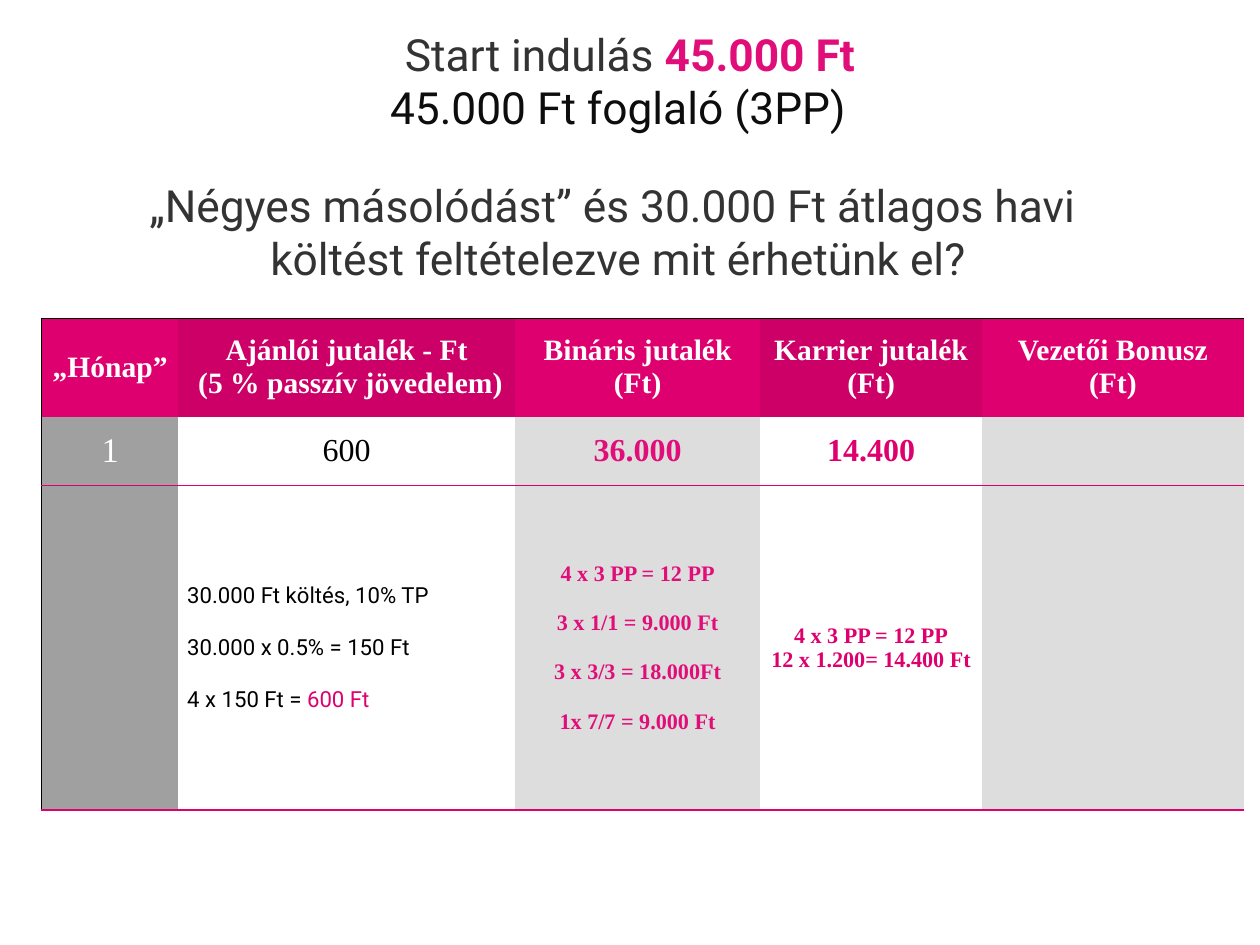
from lxml import etree
from pptx import Presentation
from pptx.dml.color import RGBColor as Rgb
from pptx.enum.text import MSO_ANCHOR as Anchor, PP_ALIGN as Align
from pptx.oxml import parse_xml
from pptx.oxml.ns import nsdecls, qn
from pptx.util import Pt

theme = {
    "pink": "DE006E", "rose": "E10E79", "plum": "CC0066",
    "dark": "333333", "ink": "0D0D0D", "black": "000000", "white": "FFFFFF",
    "gray": "A0A0A0", "pale": "DDDDDD",
    "sans": "Roboto", "serif": "Times New Roman",
    "title": 36, "head": 24, "month": 28, "sum": 26, "note": 18,
}


def write(para, runs, size, face, align=Align.CENTER):
    para.alignment = align
    for text, color, bold in runs:
        for i, line in enumerate(text.split("\n")):
            if i:
                para.add_line_break()
            run = para.add_run()
            run.text = line
            font = run.font
            font.name, font.size, font.bold = theme[face], Pt(theme[size]), bold
            font.color.rgb = Rgb.from_string(theme[color])


def edge(cell, side, color, width):
    props = cell._tc.get_or_add_tcPr()
    props.append(parse_xml(
        f'<a:{side} {nsdecls("a")} w="{Pt(width)}"><a:solidFill>'
        f'<a:srgbClr val="{theme[color]}"/></a:solidFill></a:{side}>'))


deck = Presentation()
deck.slide_width, deck.slide_height = Pt(1024), Pt(768)
slide = deck.slides.add_slide(deck.slide_layouts[6])

box = slide.shapes.add_textbox(Pt(0), Pt(13.5), Pt(1024), Pt(226))
frame = box.text_frame
frame.word_wrap = True
frame.vertical_anchor = Anchor.MIDDLE
frame.margin_left = frame.margin_right = Pt(4.5)
frame.margin_top = frame.margin_bottom = Pt(4.5)
title = [
    ([("Start indulás ", "dark", False), ("45.000 Ft", "rose", True)], 0, 0),
    ([("45.000 Ft foglaló (3PP)", "ink", False)], 0, 19.5),
    ([("„Négyes másolódást” és 30.000 Ft átlagos havi ", "dark", False)], 36, 0),
    ([("költést feltételezve mit érhetünk el?", "dark", False)], 0, 0),
]
for i, (runs, gap, inset) in enumerate(title):
    para = frame.add_paragraph() if i else frame.paragraphs[0]
    write(para, runs, "title", "sans")
    if gap:
        para.space_before = Pt(gap)
    if inset:
        para._p.get_or_add_pPr().set("marR", str(Pt(inset)))

cols = [111, 273.5, 199.5, 180, 213]
rows = [80, 56, 264]
shape = slide.shapes.add_table(
    len(rows), len(cols), Pt(34), Pt(258.5), Pt(sum(cols)), Pt(sum(rows)))
table = shape.table
style = table._tbl.tblPr.find(qn("a:tableStyleId"))
style.text = "{2D5ABB26-0587-4C30-8999-92F81FD0307C}"
for col, width in zip(table.columns, cols):
    col.width = Pt(width)
for row, height in zip(table.rows, rows):
    row.height = Pt(height)

heads = ["„Hónap”", "Ajánlói jutalék - Ft\n (5 % passzív jövedelem)",
         "Bináris jutalék\n(Ft)", "Karrier jutalék\n(Ft)", "Vezetői Bonusz (Ft)"]
sums = [("1", "white", False, "month"), ("600", "black", False, "sum"),
        ("36.000", "rose", True, "sum"), ("14.400", "pink", True, "sum")]
spend = [[("30.000 Ft költés, 10% TP", "black", False)],
         [("30.000 x 0.5% = 150 Ft", "black", False)],
         [("4 x 150 Ft = ", "black", False), ("600 Ft", "pink", False)]]
pairs = ["4 x 3 PP = 12 PP", "3 x 1/1 = 9.000 Ft",
         "3 x 3/3 = 18.000Ft", "1x 7/7 = 9.000 Ft"]
steps = ["4 x 3 PP = 12 PP", "12 x 1.200= 14.400 Ft"]
fills = [["pink", "plum", "pink", "plum", "pink"]]
fills += [["gray", None, "pale", None, "pale"]] * 2

for r, line in enumerate(fills):
    for c, fill in enumerate(line):
        cell = table.cell(r, c)
        cell.vertical_anchor = Anchor.MIDDLE
        if c == 0:
            edge(cell, "lnL", "black", 1)
        if r == 0:
            edge(cell, "lnT", "black", 1)
        else:
            if r == 2:
                edge(cell, "lnT", "pink", 1.5)
            edge(cell, "lnB", "pink", 1.5)
        if fill:
            cell.fill.solid()
            cell.fill.fore_color.rgb = Rgb.from_string(theme[fill])
        else:
            cell.fill.background()

for c, text in enumerate(heads):
    para = table.cell(0, c).text_frame.paragraphs[0]
    write(para, [(text, "white", True)], "head", "serif")
for c, (text, color, bold, size) in enumerate(sums):
    para = table.cell(1, c).text_frame.paragraphs[0]
    write(para, [(text, color, bold)], size, "serif")

notes = [
    (1, spend, "sans", Align.LEFT, 21),
    (2, [[(text, "rose", True)] for text in pairs], "serif", Align.CENTER, 20),
    (3, [[(text, "pink", True)] for text in steps], "serif", Align.CENTER, 0),
]
for c, lines, face, align, gap in notes:
    frame = table.cell(2, c).text_frame
    for i, runs in enumerate(lines):
        para = frame.add_paragraph() if i else frame.paragraphs[0]
        write(para, runs, "note", face, align)
        if i and gap:
            para.space_before = Pt(gap)

deck.save("out.pptx")
